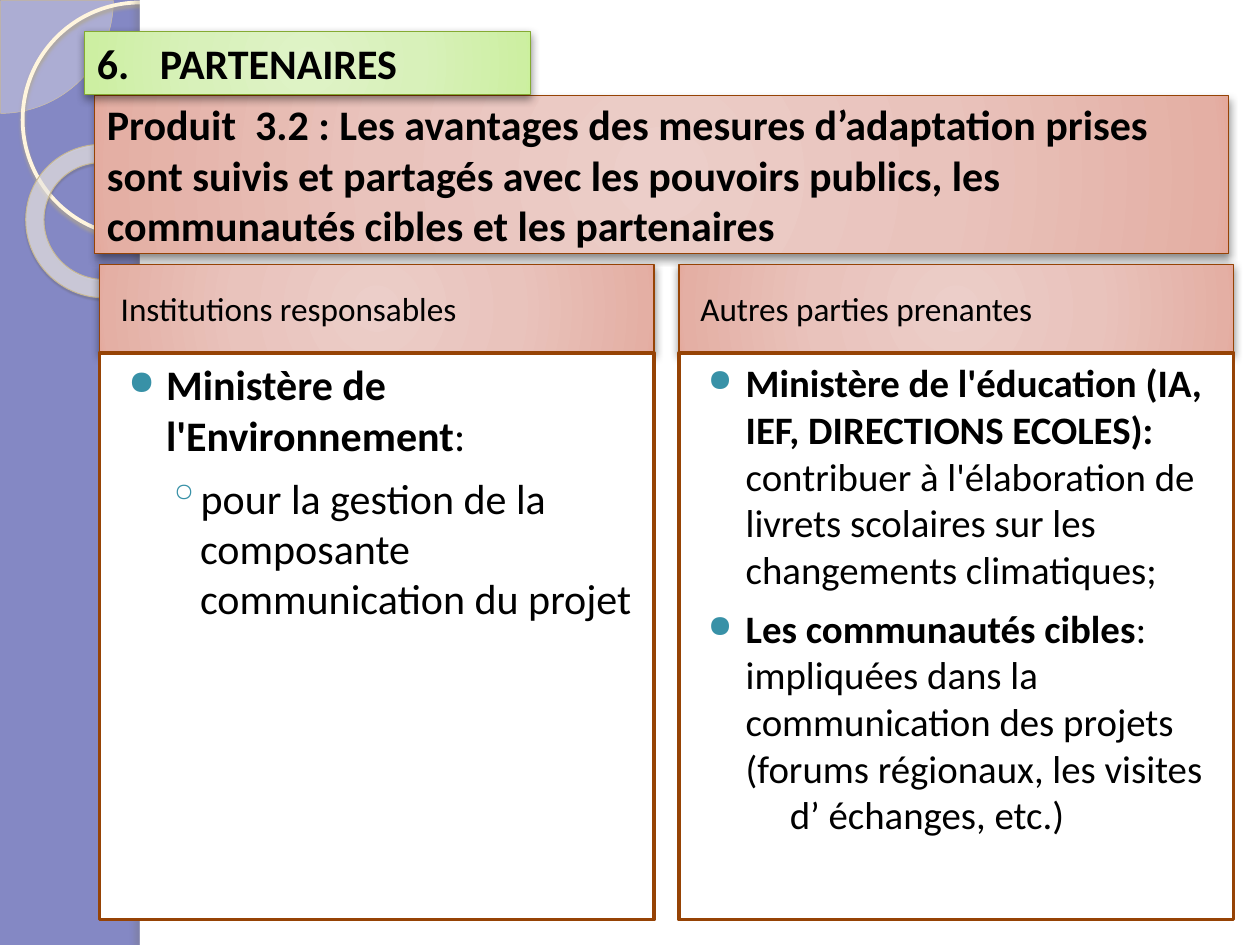
from pptx import Presentation
from pptx.dml.color import RGBColor
from pptx.enum.shapes import MSO_SHAPE
from pptx.enum.text import MSO_ANCHOR, PP_ALIGN
from pptx.oxml import parse_xml
from pptx.oxml.ns import nsdecls, qn
from pptx.util import Inches, Pt

THEME = {
    "font": "Calibri", "ink": "000000", "paper": "FFFFFF", "back": "8488C4",
    "rust": "964305", "leaf": "84AA33", "teal": "3891A7",
    "cream": "FEFAF4", "sand": "D3C39F", "ring": "FFF5DE", "tan": "C7B893",
    "pink": [(0, "ECCEC9"), (50, "E9C3BC"), (97, "E4AFA4"), (100, "E4A89B")],
    "green": [(0, "DFF3C7"), (50, "D8F1BA"), (97, "CDEFA2"), (100, "CAF199")],
    "drop": ("000000", 43, 5, 2, 90),
    "large": 24, "mid": 22.2, "small": 19,
}
CELL = 0.1
WIDE, HIGH = 100, 75

HEAD = "PARTENAIRES"
TITLE = ("Produit  3.2 : Les avantages des mesures d’adaptation "
         "prises sont suivis et partagés avec les pouvoirs publics, "
         "les communautés cibles et les partenaires")
DOT = {"left": 0.43, "hang": 0.3, "mark": "●", "scale": 80, "before": 7}
RING = {"left": 0.7, "hang": 0.26, "mark": "◦", "before": 7, "level": 1}
TAIL = {"left": 0.78}
PANES = [
    ("Institutions responsables", "large", [
        (DOT, [("Ministère de l'Environnement", True), (":", False)]),
        (RING, [("pour la gestion de la composante communication du projet", False)]),
    ]),
    ("Autres parties prenantes", "mid", [
        (DOT, [("Ministère de l'éducation (IA, IEF, DIRECTIONS ECOLES): ", True),
               ("contribuer à l'élaboration de livrets scolaires sur les "
                "changements climatiques;", False)]),
        (DOT, [("Les communautés cibles", True),
               (": impliquées dans la communication des projets "
                "(forums régionaux, les visites", False)]),
        (TAIL, [("d’ échanges, etc.)", False)]),
    ]),
]


def tint(name):
    return RGBColor.from_string(THEME[name])


def blend(stops):
    marks = "".join(f'<a:gs pos="{at * 1000}"><a:srgbClr val="{hue}"/></a:gs>'
                    for at, hue in stops)
    return parse_xml(
        f'<a:gradFill {nsdecls("a")} rotWithShape="1"><a:gsLst>{marks}</a:gsLst>'
        '<a:path path="circle"><a:fillToRect l="50000" t="50000" r="50000" b="50000"/>'
        '</a:path></a:gradFill>')


def shade(form, hue, clear, blur, gap, turn):
    glow = form._element.spPr.find(qn("a:effectLst"))
    glow.append(parse_xml(
        f'<a:outerShdw {nsdecls("a")} blurRad="{Pt(blur)}" dist="{Pt(gap)}" '
        f'dir="{turn * 60000}" algn="tl" rotWithShape="0"><a:srgbClr val="{hue}">'
        f'<a:alpha val="{clear * 1000}"/></a:srgbClr></a:outerShdw>'))


def draw(slide, spot, kind=MSO_SHAPE.RECTANGLE, fill=None, clear=None,
         line=None, width=0.75, drop=None):
    form = slide.shapes.add_shape(kind, *(Inches(part * CELL) for part in spot))
    form.shadow.inherit = False
    form.fill.background()
    if fill and isinstance(THEME[fill], list):
        props = form._element.spPr
        props.replace(props.find(qn("a:noFill")), blend(THEME[fill]))
    elif fill:
        form.fill.solid()
        form.fill.fore_color.rgb = tint(fill)
        if clear:
            hue = form._element.spPr.find(qn("a:solidFill"))[0]
            hue.append(parse_xml(f'<a:alpha {nsdecls("a")} val="{clear * 1000}"/>'))
    if line:
        form.line.color.rgb = tint(line)
        form.line.width = Pt(width)
    else:
        form.line.fill.background()
    if drop:
        shade(form, *drop)
    return form


def write(form, runs, size="large", first=True, left=0, hang=0, before=0,
          mark=None, scale=100, start=None, level=0, anchor=MSO_ANCHOR.MIDDLE):
    frame = form.text_frame
    frame.word_wrap = True
    frame.vertical_anchor = anchor
    para = frame.paragraphs[0] if first else frame.add_paragraph()
    para.alignment = PP_ALIGN.LEFT
    para.level = level
    para.space_before = Pt(before)
    props = para._p.get_or_add_pPr()
    props.set("marL", str(Inches(left)))
    props.set("indent", str(-Inches(hang)))
    bits = []
    if mark:
        bits = [f'<a:buClr {{}}><a:srgbClr val="{THEME["teal"]}"/></a:buClr>',
                f'<a:buSzPct {{}} val="{scale * 1000}"/>',
                f'<a:buChar {{}} char="{mark}"/>']
    elif start:
        bits = [f'<a:buFont {{}} typeface="+mj-lt"/>',
                f'<a:buAutoNum {{}} type="arabicPeriod" startAt="{start}"/>']
    for bit in bits:
        props.append(parse_xml(bit.format(nsdecls("a"))))
    for text, bold in runs:
        run = para.add_run()
        run.text = text
        run.font.name = THEME["font"]
        run.font.size = Pt(THEME[size])
        run.font.bold = bold
        run.font.color.rgb = tint("ink")


def adorn(slide):
    pie = draw(slide, (-8.9, -8.9, 17.9, 17.9), MSO_SHAPE.PIE,
               fill="cream", clear=33, line="sand", width=0.25)
    pie.adjustments[0], pie.adjustments[1] = 0, 54
    draw(slide, (1.8, 0.2, 18.6, 18.6), MSO_SHAPE.OVAL, line="ring", width=2.15,
         drop=("B0A68F", 85, 2, 2, 90))
    donut = draw(slide, (2, 11.5, 12.3, 12.1), MSO_SHAPE.DONUT, fill="cream",
                 clear=60, line="tan", width=0.58, drop=("5A5444", 35, 1, 1.2, 75))
    donut.adjustments[0] = 0.12
    donut.rotation = 38.6
    edge = 11.1
    draw(slide, (edge, 0, WIDE - edge, HIGH), fill="paper")
    draw(slide, (edge, 0, 0.8, HIGH), fill="paper", drop=("736F63", 25, 3, 3, 180))


def main():
    deck = Presentation()
    deck.slide_width, deck.slide_height = Inches(WIDE * CELL), Inches(HIGH * CELL)
    slide = deck.slides.add_slide(deck.slide_layouts[6])
    slide.background.fill.solid()
    slide.background.fill.fore_color.rgb = tint("back")
    adorn(slide)

    band = draw(slide, (7.5, 7.6, 90, 12.5), fill="pink", line="rust", drop=THEME["drop"])
    write(band, [(TITLE, True)])

    wide, gap, top, cap, deep = 44, 2, 21, 7, 45
    for col, (label, size, items) in enumerate(PANES):
        left = 7.9 + col * (wide + gap)
        head = draw(slide, (left, top, wide, cap), fill="pink", line="rust",
                    drop=THEME["drop"])
        write(head, [(label, False)], size="small", left=0.07, before=1)
        body = draw(slide, (left, top + cap, wide, deep), fill="paper",
                    line="rust", width=2)
        for row, (style, runs) in enumerate(items):
            write(body, runs, size=size, first=row == 0, anchor=MSO_ANCHOR.TOP, **style)

    tag = draw(slide, (6.7, 2.5, 35.4, 5), fill="green", line="leaf", drop=THEME["drop"])
    write(tag, [(HEAD, True)], left=0.5, hang=0.5, start=6)
    deck.save("out.pptx")


if __name__ == "__main__":
    main()
